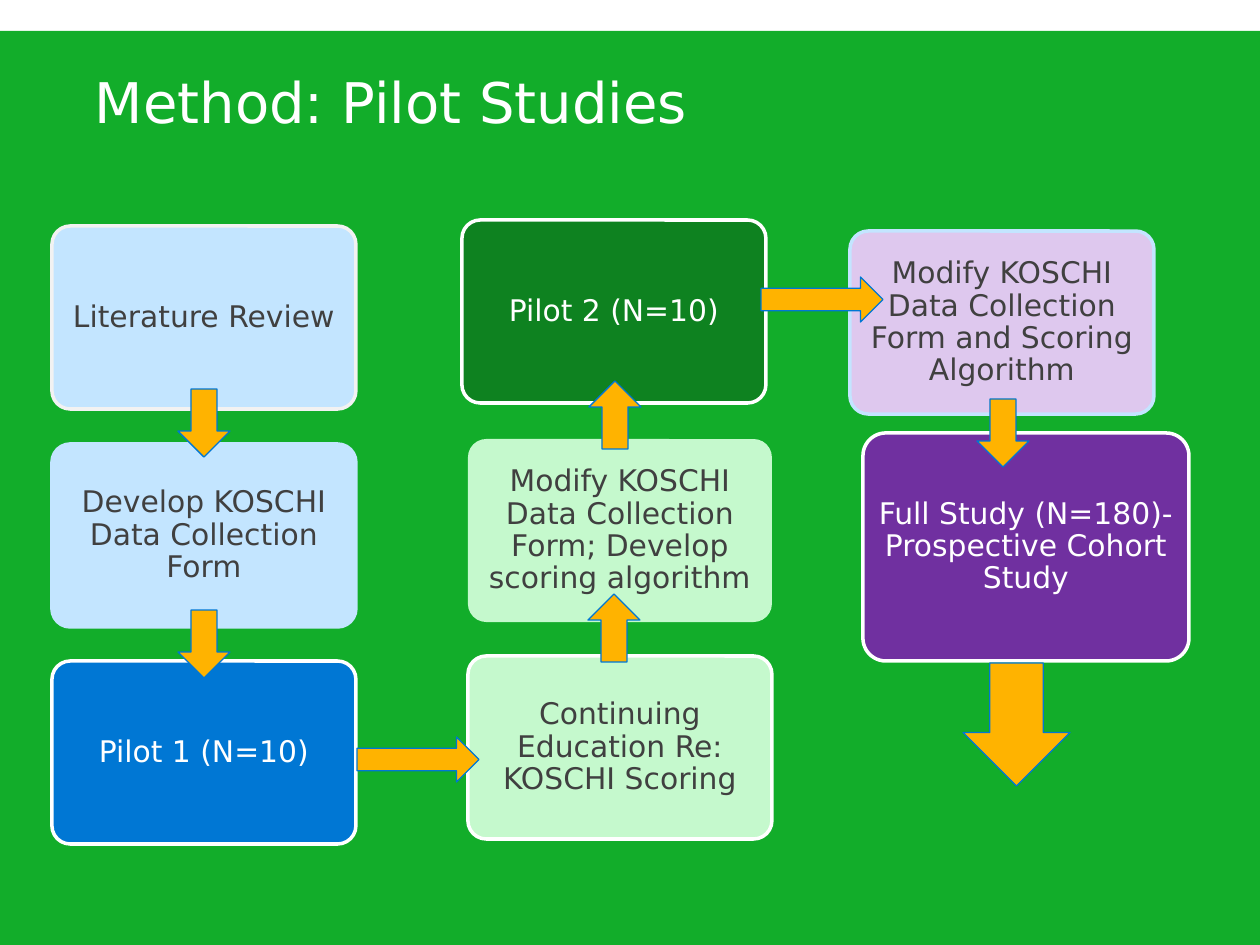
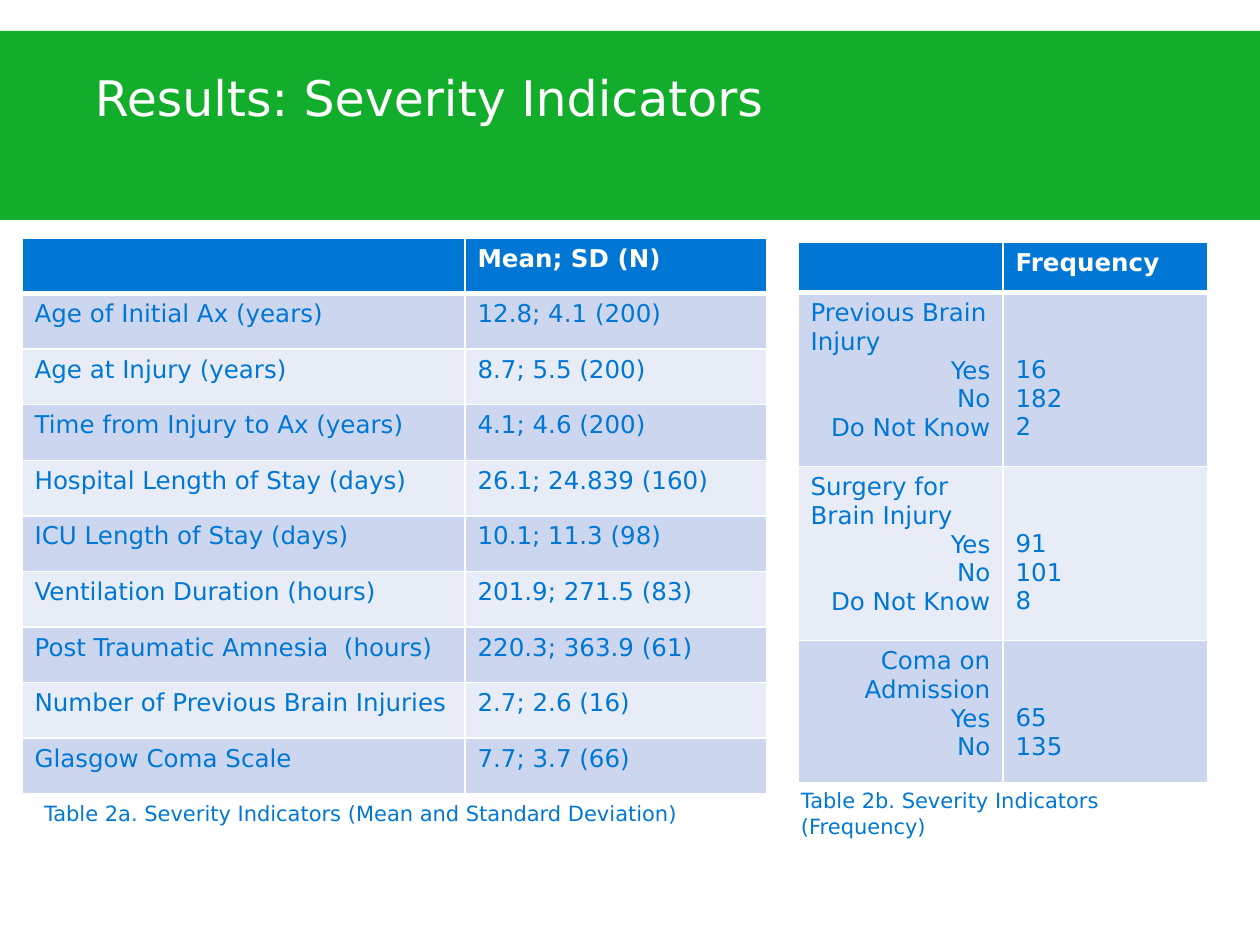
from lxml import etree
from pptx import Presentation
from pptx.dml.color import RGBColor
from pptx.enum.shapes import MSO_SHAPE
from pptx.enum.text import MSO_ANCHOR, PP_ALIGN
from pptx.oxml.ns import qn
from pptx.util import Emu, Pt

EMU_PER_PX = 914400 / 126
SLIDE_SIZE = (1260, 945)
FONT = "DejaVu Sans"

WHITE = RGBColor(0xFF, 0xFF, 0xFF)
GREEN = RGBColor(0x12, 0xAD, 0x2A)
DARK_GREEN = RGBColor(0x0E, 0x82, 0x20)
PALE_GREEN = RGBColor(0xC5, 0xF9, 0xCD)
BLUE = RGBColor(0x00, 0x77, 0xD4)
PALE_BLUE = RGBColor(0xC3, 0xE5, 0xFF)
PURPLE = RGBColor(0x70, 0x30, 0xA0)
PALE_PURPLE = RGBColor(0xDE, 0xC8, 0xEE)
ORANGE = RGBColor(0xFF, 0xB3, 0x00)
GREY = RGBColor(0x40, 0x40, 0x40)
LIGHT_GREY = RGBColor(0xF2, 0xF2, 0xF2)
ROW_FILLS = (RGBColor(0xCC, 0xD6, 0xEF), RGBColor(0xE7, 0xEC, 0xF7))

RECTANGLE = MSO_SHAPE.RECTANGLE
ROUNDED = MSO_SHAPE.ROUNDED_RECTANGLE
DOWN = MSO_SHAPE.DOWN_ARROW
UP = MSO_SHAPE.UP_ARROW
RIGHT = MSO_SHAPE.RIGHT_ARROW
TOP = MSO_ANCHOR.TOP
MIDDLE = MSO_ANCHOR.MIDDLE
ALIGN_LEFT = PP_ALIGN.LEFT
ALIGN_RIGHT = PP_ALIGN.RIGHT
ALIGN_CENTER = PP_ALIGN.CENTER

BAND = (0, 31, 1260, 189)
TITLE_BOX = (95, 63, 1071, 157)
FLOW_PANEL = (0, 126, 1260, 819)
STEP_SIZE = (304, 183)
VERTICAL_ARROW = (52, 68)
HORIZONTAL_ARROW = (122, 45)
TWO_LINES = 57

STEPS = [
    ("Literature Review", (52, 100), STEP_SIZE, PALE_BLUE, LIGHT_GREY, GREY),
    ("Develop KOSCHI Data Collection Form", (52, 318), STEP_SIZE, PALE_BLUE, PALE_BLUE, GREY),
    ("Pilot 1 (N=10)", (52, 535), STEP_SIZE, BLUE, WHITE, WHITE),
    ("Continuing Education Re: KOSCHI Scoring", (468, 530), STEP_SIZE, PALE_GREEN, WHITE, GREY),
    ("Modify KOSCHI Data Collection Form; Develop scoring algorithm",
     (468, 313), STEP_SIZE, PALE_GREEN, None, GREY),
    ("Pilot 2 (N=10)", (462, 94), STEP_SIZE, DARK_GREEN, WHITE, WHITE),
    ("Modify KOSCHI Data Collection Form and Scoring Algorithm",
     (850, 105), STEP_SIZE, PALE_PURPLE, PALE_BLUE, GREY),
    ("Full Study (N=180)- Prospective Cohort Study", (863, 307), (326, 228), PURPLE, WHITE, WHITE),
]

ARROWS = [
    (DOWN, (178, 263), VERTICAL_ARROW),
    (UP, (588, 468), VERTICAL_ARROW),
    (DOWN, (178, 484), VERTICAL_ARROW),
    (UP, (589, 255), VERTICAL_ARROW),
    (DOWN, (977, 273), VERTICAL_ARROW),
    (RIGHT, (357, 611), HORIZONTAL_ARROW),
    (RIGHT, (761, 151), HORIZONTAL_ARROW),
    (DOWN, (963, 537), (107, 123)),
]

MEANS = [
    ("", "Mean; SD (N)"),
    ("Age of Initial Ax (years)", "12.8; 4.1 (200)"),
    ("Age at Injury (years)", "8.7; 5.5 (200)"),
    ("Time from Injury to Ax (years)", "4.1; 4.6 (200)"),
    ("Hospital Length of Stay (days)", "26.1; 24.839 (160)"),
    ("ICU Length of Stay (days)", "10.1; 11.3 (98)"),
    ("Ventilation Duration (hours)", "201.9; 271.5 (83)"),
    ("Post Traumatic Amnesia  (hours)", "220.3; 363.9 (61)"),
    ("Number of Previous Brain Injuries", "2.7; 2.6 (16)"),
    ("Glasgow Coma Scale", "7.7; 3.7 (66)"),
]

FREQUENCIES = [
    ("Previous Brain Injury", ALIGN_LEFT, {"Yes": "16", "No": "182", "Do Not Know": "2"}),
    ("Surgery for Brain Injury", ALIGN_LEFT, {"Yes": "91", "No": "101", "Do Not Know": "8"}),
    ("Coma on Admission", ALIGN_RIGHT, {"Yes": "65", "No": "135"}),
]


def px(length):
    return Emu(round(length * EMU_PER_PX))


def place(box):
    return [px(length) for length in box]


def write(frame, lines, size, color, bold=False, alignments=None):
    alignments = alignments or [ALIGN_LEFT] * len(lines)
    for index, (line, alignment) in enumerate(zip(lines, alignments)):
        paragraph = frame.add_paragraph() if index else frame.paragraphs[0]
        paragraph.alignment = alignment
        run = paragraph.add_run()
        run.text = line
        run.font.color.rgb = color
        for name, value in {"name": FONT, "size": Pt(size), "bold": bold}.items():
            setattr(run.font, name, value)


def set_frame(frame, margins, anchor=TOP):
    left, top, right, bottom = place(margins)
    values = {"word_wrap": True, "vertical_anchor": anchor, "margin_left": left,
              "margin_top": top, "margin_right": right, "margin_bottom": bottom}
    for name, value in values.items():
        setattr(frame, name, value)


def add_shape(slide, kind, box, fill, line=None, width=1):
    shape = slide.shapes.add_shape(kind, *place(box))
    shape.shadow.inherit = False
    shape.fill.solid()
    shape.fill.fore_color.rgb = fill
    if line is None:
        shape.line.fill.background()
    else:
        shape.line.color.rgb = line
        shape.line.width = Pt(width)
    return shape


def add_text(slide, box, text, size, color, margins):
    frame = slide.shapes.add_textbox(*place(box)).text_frame
    set_frame(frame, margins)
    write(frame, [text], size, color)


def start_slide(presentation):
    slide = presentation.slides.add_slide(presentation.slide_layouts[6])
    add_shape(slide, RECTANGLE, BAND, GREEN)
    return slide


def add_title(slide, text, size):
    add_text(slide, TITLE_BOX, text, size, WHITE, (0, 4, 0, 0))


def add_caption(slide, box, text):
    add_text(slide, box, text, 12, BLUE, (12, 6, 12, 6))


def draw_flow(slide, panel):
    left, top = panel[:2]
    for text, (x, y), size, fill, line, color in STEPS:
        step = add_shape(slide, ROUNDED, (left + x, top + y, *size), fill, line, 2)
        step.adjustments[0] = 0.1
        set_frame(step.text_frame, (8, 9, 8, 9), MIDDLE)
        write(step.text_frame, [text], 17, color, alignments=[ALIGN_CENTER])
        step.text_frame.paragraphs[0].line_spacing = 0.9
    for kind, (x, y), size in ARROWS:
        add_shape(slide, kind, (left + x, top + y, *size), ORANGE, BLUE, 0.75)


def set_borders(cell, widths):
    properties = cell._tc.get_or_add_tcPr()
    for index, (side, width) in enumerate(widths.items()):
        border = etree.Element(qn(f"a:ln{side}"), w=str(Pt(width)))
        fill = etree.SubElement(border, qn("a:solidFill"))
        etree.SubElement(fill, qn("a:srgbClr"), val=str(WHITE))
        properties.insert(index, border)


def add_grid(slide, box, column_widths, row_heights):
    table = slide.shapes.add_table(len(row_heights), len(column_widths), *place(box)).table
    table.first_row = table.horz_banding = False
    for column, width in zip(table.columns, column_widths):
        column.width = px(width)
    for index, (row, height) in enumerate(zip(table.rows, row_heights)):
        row.height = px(height)
        for cell in row.cells:
            cell.fill.solid()
            cell.fill.fore_color.rgb = ROW_FILLS[(index - 1) % 2] if index else BLUE
            set_borders(cell, {"L": 1, "R": 1, "T": 3 if index == 1 else 1,
                               "B": 1 if index else 3})
    return table


def draw_means(slide, box):
    left, top, width, height = box
    label_width = 443
    table = add_grid(slide, box, (label_width, width - label_width),
                     [height / len(MEANS)] * len(MEANS))
    for row_index, texts in enumerate(MEANS):
        for column_index, text in enumerate(texts):
            if text:
                write(table.cell(row_index, column_index).text_frame, [text], 14,
                      BLUE if row_index else WHITE, bold=row_index == 0)
    add_caption(slide, (left + 10, top + height + 1, 714, 38),
                "Table 2a. Severity Indicators (Mean and Standard Deviation)")


def draw_frequencies(slide, box):
    left, top, width, height = box
    table = add_grid(slide, box, (width / 2, width / 2), (46, 174, 174, 142))
    write(table.cell(0, 1).text_frame, ["Frequency"], 14, WHITE, bold=True)
    for row_index, (heading, alignment, counts) in enumerate(FREQUENCIES, 1):
        label_cell, count_cell = table.rows[row_index].cells
        write(label_cell.text_frame, [heading, *counts], 14, BLUE,
              alignments=[alignment] + [ALIGN_RIGHT] * len(counts))
        count_cell.margin_top = px(6 + TWO_LINES)
        write(count_cell.text_frame, list(counts.values()), 14, BLUE)
    add_caption(slide, (left - 9, top + height + 4, 450, 63),
                "Table 2b. Severity Indicators (Frequency)")


def build_method(presentation):
    slide = start_slide(presentation)
    add_shape(slide, RECTANGLE, FLOW_PANEL, GREEN)
    add_title(slide, "Method: Pilot Studies", 32)
    draw_flow(slide, FLOW_PANEL)


def build_results(presentation):
    slide = start_slide(presentation)
    add_title(slide, "Results: Severity Indicators", 28)
    draw_means(slide, (22, 238, 745, 556))
    draw_frequencies(slide, (798, 242, 410, 536))


def main():
    presentation = Presentation()
    presentation.slide_width, presentation.slide_height = place(SLIDE_SIZE)
    build_method(presentation)
    build_results(presentation)
    presentation.save("out.pptx")


if __name__ == "__main__":
    main()
